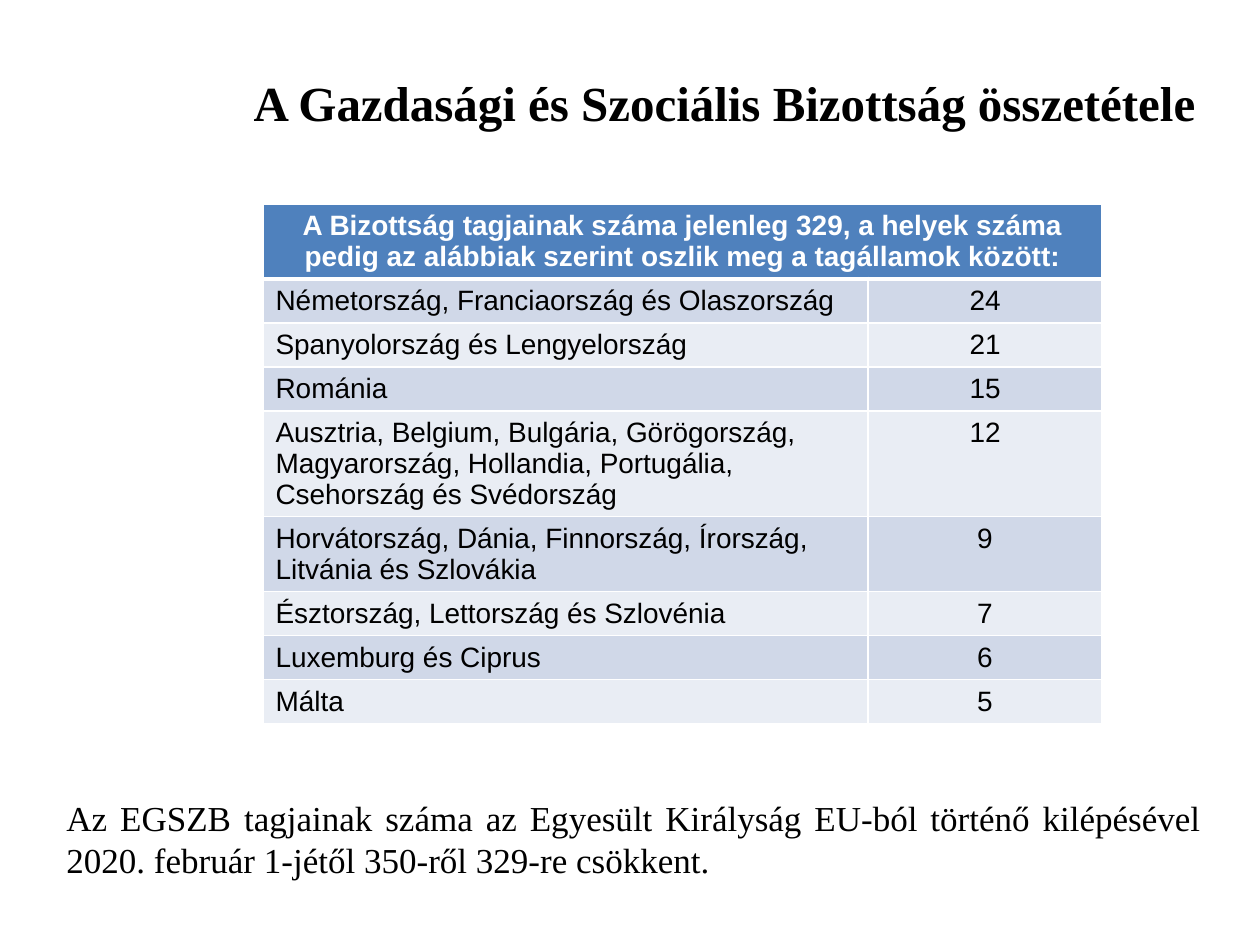
from dataclasses import dataclass

from lxml.etree import SubElement
from pptx import Presentation
from pptx.dml.color import RGBColor
from pptx.enum.text import MSO_ANCHOR, MSO_AUTO_SIZE, PP_ALIGN
from pptx.oxml.ns import qn
from pptx.util import Inches, Pt

PX = Inches(1) / 126
LINE_PX, ROW_PADDING_PX = 31, 13

TITLE = "A Gazdasági és Szociális Bizottság összetétele"
HEADING = (
    "A Bizottság tagjainak száma jelenleg 329, a helyek száma "
    "pedig az alábbiak szerint oszlik meg a tagállamok között:"
)
HEADING_LINES = 2
SEATS = [
    ("Németország, Franciaország és Olaszország", 24, 1),
    ("Spanyolország és Lengyelország", 21, 1),
    ("Románia", 15, 1),
    ("Ausztria, Belgium, Bulgária, Görögország, Magyarország, "
     "Hollandia, Portugália, Csehország és Svédország", 12, 3),
    ("Horvátország, Dánia, Finnország, Írország, Litvánia és Szlovákia", 9, 2),
    ("Észtország, Lettország és Szlovénia", 7, 1),
    ("Luxemburg és Ciprus", 6, 1),
    ("Málta", 5, 1),
]
FOOTNOTE = (
    "Az EGSZB tagjainak száma az Egyesült Királyság EU-ból történő "
    "kilépésével 2020. február 1-jétől 350-ről 329-re csökkent."
)


@dataclass(frozen=True)
class Theme:
    """Colours, fonts and sizes of the slide."""

    ink: str = "000000"
    paper: str = "FFFFFF"
    heading_fill: str = "4F81BD"
    bands: tuple = ("D0D8E8", "E9EDF4")
    serif: str = "Times New Roman"
    sans: str = "Arial"
    title_size: int = 28
    table_size: int = 16
    footnote_size: int = 20
    rule: int = 1
    heading_rule: int = 3


def px(*lengths):
    """Turn px lengths into EMU."""
    return [round(length * PX) for length in lengths]


class SlideBuilder:
    """Holds the theme and the current slide."""

    def __init__(self, slide, theme):
        """Keep the slide and its theme."""
        self.slide = slide
        self.theme = theme

    def add_text(self, frame, text, font_name, size, align, color=None, bold=False):
        """Fill the first paragraph with a formatted run."""
        paragraph = frame.paragraphs[0]
        paragraph.alignment = align
        run = paragraph.add_run()
        run.text = text
        run.font.name = font_name
        run.font.size = Pt(size)
        run.font.bold = bold
        run.font.color.rgb = RGBColor.from_string(color or self.theme.ink)

    def title(self, text, *box):
        """Place and fill the title placeholder."""
        title = self.slide.shapes.title
        title.left, title.top, title.width, title.height = px(*box)
        frame = title.text_frame
        frame.vertical_anchor = MSO_ANCHOR.MIDDLE
        self.add_text(frame, text, self.theme.serif, self.theme.title_size,
                      PP_ALIGN.CENTER, bold=True)

    def footnote(self, text, *box):
        """Add a justified text box."""
        frame = self.slide.shapes.add_textbox(*px(*box)).text_frame
        frame.word_wrap = True
        frame.auto_size = MSO_AUTO_SIZE.SHAPE_TO_FIT_TEXT
        self.add_text(frame, text, self.theme.serif, self.theme.footnote_size,
                      PP_ALIGN.JUSTIFY)

    def style_cell(self, cell, fill, top, bottom):
        """Set the fill and the four borders of a cell."""
        properties = cell._tc.get_or_add_tcPr()
        rule = self.theme.rule
        for side, width in (("L", rule), ("R", rule), ("T", top), ("B", bottom)):
            border = SubElement(properties, qn(f"a:ln{side}"), w=str(Pt(width)))
            paint = SubElement(border, qn("a:solidFill"))
            SubElement(paint, qn("a:srgbClr"), val=self.theme.paper)
        cell.fill.solid()
        cell.fill.fore_color.rgb = RGBColor.from_string(fill)

    def seat_table(self, heading, heading_lines, seats, left, top, widths):
        """Add the banded table under a merged heading."""
        theme = self.theme
        line_counts = [heading_lines] + [lines for _, _, lines in seats]
        heights = [ROW_PADDING_PX + LINE_PX * lines for lines in line_counts]
        table = self.slide.shapes.add_table(
            len(heights), len(widths),
            *px(left, top, sum(widths), sum(heights))).table
        for column, width in zip(table.columns, px(*widths)):
            column.width = width
        for row, height in zip(table.rows, px(*heights)):
            row.height = height

        for cell in table.rows[0].cells:
            self.style_cell(cell, theme.heading_fill, theme.rule, theme.heading_rule)
        table.cell(0, 0).merge(table.cell(0, 1))
        self.add_text(table.cell(0, 0).text_frame, heading, theme.sans,
                      theme.table_size, PP_ALIGN.CENTER, theme.paper, bold=True)

        for index, (countries, count, _) in enumerate(seats):
            upper = theme.rule if index else theme.heading_rule
            band = theme.bands[index % len(theme.bands)]
            entries = ((countries, PP_ALIGN.LEFT), (str(count), PP_ALIGN.CENTER))
            for column, (text, align) in enumerate(entries):
                cell = table.cell(index + 1, column)
                self.style_cell(cell, band, upper, theme.rule)
                self.add_text(cell.text_frame, text, theme.sans,
                              theme.table_size, align)


def main():
    """Build and save the slide."""
    deck = Presentation()
    deck.slide_width, deck.slide_height = px(1260, 945)
    builder = SlideBuilder(deck.slides.add_slide(deck.slide_layouts[5]), Theme())
    builder.title(TITLE, 189, 0, 1071, 203)
    builder.seat_table(HEADING, HEADING_LINES, SEATS, 263, 204, (605, 234))
    builder.footnote(FOOTNOTE, 54, 790, 1160, 97)
    deck.save("out.pptx")


if __name__ == "__main__":
    main()
